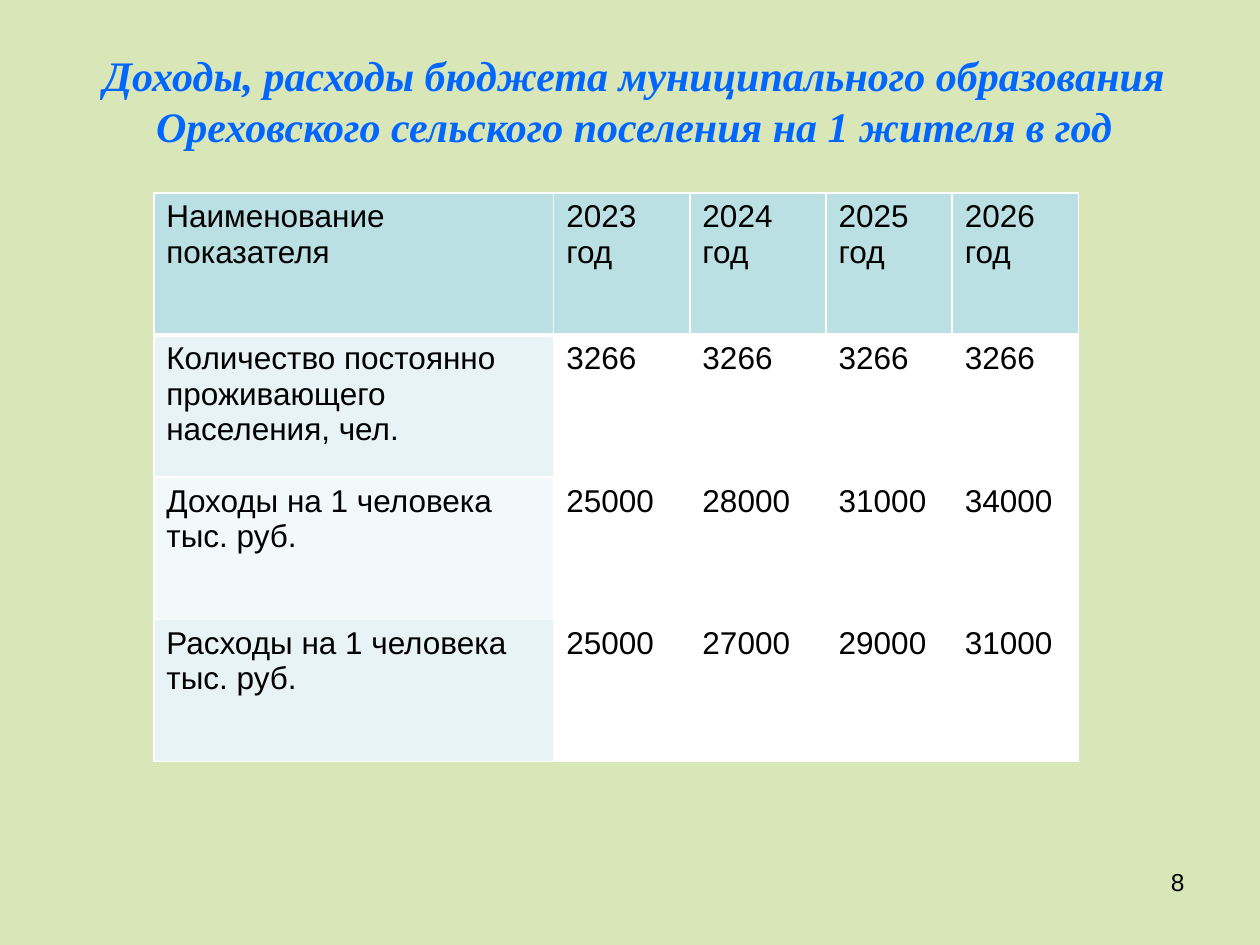
from lxml.etree import SubElement
from pptx import Presentation
from pptx.dml.color import RGBColor
from pptx.enum.text import MSO_ANCHOR, PP_ALIGN
from pptx.oxml.ns import qn
from pptx.util import Cm, Pt

BACKGROUND = RGBColor(0xD9, 0xE6, 0xB8)
TITLE_BLUE = RGBColor(0x00, 0x66, 0xFF)
BLACK = RGBColor(0x00, 0x00, 0x00)
WHITE = RGBColor(0xFF, 0xFF, 0xFF)
HEADER_FILL = RGBColor(0xBB, 0xE0, 0xE3)
LABEL_FILLS = [RGBColor(0xF3, 0xF9, 0xFA), RGBColor(0xE7, 0xF3, 0xF4)]

TITLE = (
    "Доходы, расходы бюджета муниципального образования "
    "Ореховского сельского поселения на 1 жителя в год"
)
BUDGET_ROWS = [
    ["Наименование показателя", "2023 год", "2024 год", "2025 год", "2026 год"],
    ["Количество постоянно проживающего населения, чел.", "3266", "3266", "3266", "3266"],
    ["Доходы на 1 человека тыс. руб.", "25000", "28000", "31000", "34000"],
    ["Расходы на 1 человека тыс. руб.", "25000", "27000", "29000", "31000"],
]
COLUMN_SHARES = [3.17, 1.08, 1.08, 1, 1]


def set_font(para, name, size, color):
    para.font.name = name
    para.font.size = Pt(size)
    para.font.color.rgb = color


def add_text(page, box, text, align, anchor):
    frame = page.shapes.add_textbox(*box).text_frame
    frame.word_wrap = True
    frame.vertical_anchor = anchor
    para = frame.paragraphs[0]
    para.text = text
    para.alignment = align
    return para


def add_title(page, box):
    para = add_text(page, box, TITLE, PP_ALIGN.CENTER, MSO_ANCHOR.MIDDLE)
    set_font(para, "Times New Roman", 24, TITLE_BLUE)
    para.font.bold = True
    para.font.italic = True


def add_page_number(page, box):
    para = add_text(page, box, "8", PP_ALIGN.RIGHT, MSO_ANCHOR.TOP)
    set_font(para, "Arial", 14, BLACK)


def set_borders(cell, widths):
    properties = cell._tc.get_or_add_tcPr()
    for position, (side, width) in enumerate(widths.items()):
        line = properties.makeelement(qn(f"a:ln{side}"), {"w": str(Pt(width))})
        fill = SubElement(line, qn("a:solidFill"))
        SubElement(fill, qn("a:srgbClr"), val=str(WHITE))
        properties.insert(position, line)


def cell_fill(row, column):
    if row == 0:
        return HEADER_FILL
    return LABEL_FILLS[row % 2] if column == 0 else WHITE


def add_budget_table(page, box):
    left, top, width, height = box
    table = page.shapes.add_table(
        len(BUDGET_ROWS), len(COLUMN_SHARES), left, top, width, height
    ).table
    for column, share in zip(table.columns, COLUMN_SHARES):
        column.width = int(width * share / sum(COLUMN_SHARES))
    for row, texts in enumerate(BUDGET_ROWS):
        for column, text in enumerate(texts):
            cell = table.cell(row, column)
            cell.text = text
            cell.fill.solid()
            cell.fill.fore_color.rgb = cell_fill(row, column)
            set_font(cell.text_frame.paragraphs[0], "Arial", 18, BLACK)
            cell.text_frame.paragraphs[0].font.bold = False
            set_borders(cell, {
                "L": 0.96,
                "R": 0.96,
                "T": 3 if row == 1 else 0.96,
                "B": 3 if row == 0 else 0.96,
            })


def main():
    deck = Presentation()
    deck.slide_width, deck.slide_height = Cm(25.4), Cm(19.05)
    page = deck.slides.add_slide(deck.slide_layouts[6])
    page.background.fill.solid()
    page.background.fill.fore_color.rgb = BACKGROUND
    add_title(page, (Cm(1.35), Cm(0.84), Cm(22.86), Cm(2.36)))
    add_page_number(page, (Cm(18.21), Cm(17.35), Cm(5.92), Cm(1.32)))
    add_budget_table(page, (Cm(3.1), Cm(3.89), Cm(18.64), Cm(11.46)))
    deck.save("out.pptx")


if __name__ == "__main__":
    main()
